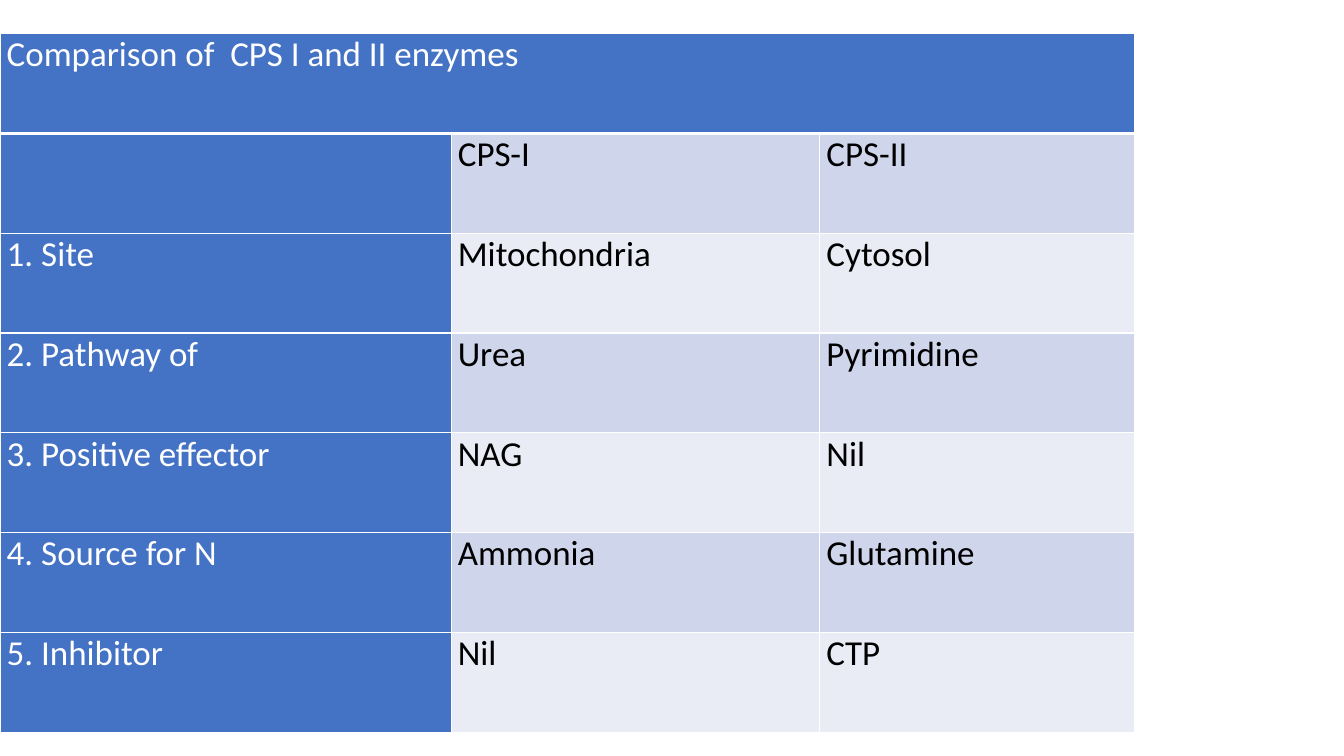
from lxml.etree import SubElement
from pptx import Presentation
from pptx.dml.color import RGBColor
from pptx.oxml.ns import qn
from pptx.util import Cm, Pt

COLORS = {
    "accent": "4472C4",
    "band_dark": "CFD5EA",
    "band_light": "E9EBF5",
    "white": "FFFFFF",
    "black": "000000",
}
HEADING = "Comparison of  CPS I and II enzymes"
COMPARISON = [
    ("", "CPS-I", "CPS-II"),
    ("1. Site", "Mitochondria", "Cytosol"),
    ("2. Pathway of", "Urea", "Pyrimidine"),
    ("3. Positive effector", "NAG", "Nil"),
    ("4. Source for N", "Ammonia", "Glutamine"),
    ("5. Inhibitor", "Nil", "CTP"),
]
COLUMN_WIDTHS = (11.37, 9.29, 7.94)


def color(name):
    return RGBColor.from_string(COLORS[name])


def add_borders(cell, bottom_width):
    properties = cell._tc.get_or_add_tcPr()
    widths = {"lnL": 1, "lnR": 1, "lnT": 1, "lnB": bottom_width}
    for side, width in widths.items():
        border = SubElement(properties, qn(f"a:{side}"), w=str(Pt(width)))
        fill = SubElement(border, qn("a:solidFill"))
        SubElement(fill, qn("a:srgbClr"), val=COLORS["white"])


def format_cell(cell, text, fill, font_color, bottom_width=1):
    add_borders(cell, bottom_width)
    cell.fill.solid()
    cell.fill.fore_color.rgb = color(fill)
    cell.margin_left = cell.margin_right = Cm(0.17)
    cell.margin_top = cell.margin_bottom = Cm(0)
    cell.text_frame.text = text
    font = cell.text_frame.paragraphs[0].font
    font.size = Pt(25)
    for run in cell.text_frame.paragraphs[0].runs:
        run.font.name = "Calibri"
        run.font.size = Pt(25)
        run.font.color.rgb = color(font_color)


def add_comparison(slide):
    comparison = slide.shapes.add_table(
        len(COMPARISON) + 1, len(COLUMN_WIDTHS),
        Cm(0), Cm(0.85), Cm(sum(COLUMN_WIDTHS)), Cm(17.6),
    ).table
    for column, width in zip(comparison.columns, COLUMN_WIDTHS):
        column.width = Cm(width)

    for column in range(len(COLUMN_WIDTHS)):
        heading = HEADING if column == 0 else ""
        format_cell(comparison.cell(0, column), heading, "accent", "white", 3)
    comparison.cell(0, 0).merge(comparison.cell(0, len(COLUMN_WIDTHS) - 1))

    for row, entries in enumerate(COMPARISON, start=1):
        band = "band_dark" if row % 2 else "band_light"
        for column, entry in enumerate(entries):
            fill, font_color = (band, "black") if column else ("accent", "white")
            format_cell(comparison.cell(row, column), entry, fill, font_color)


def main():
    presentation = Presentation()
    presentation.slide_width = Cm(33.87)
    presentation.slide_height = Cm(19.05)
    slide = presentation.slides.add_slide(presentation.slide_layouts[6])
    add_comparison(slide)
    presentation.save("out.pptx")


if __name__ == "__main__":
    main()
